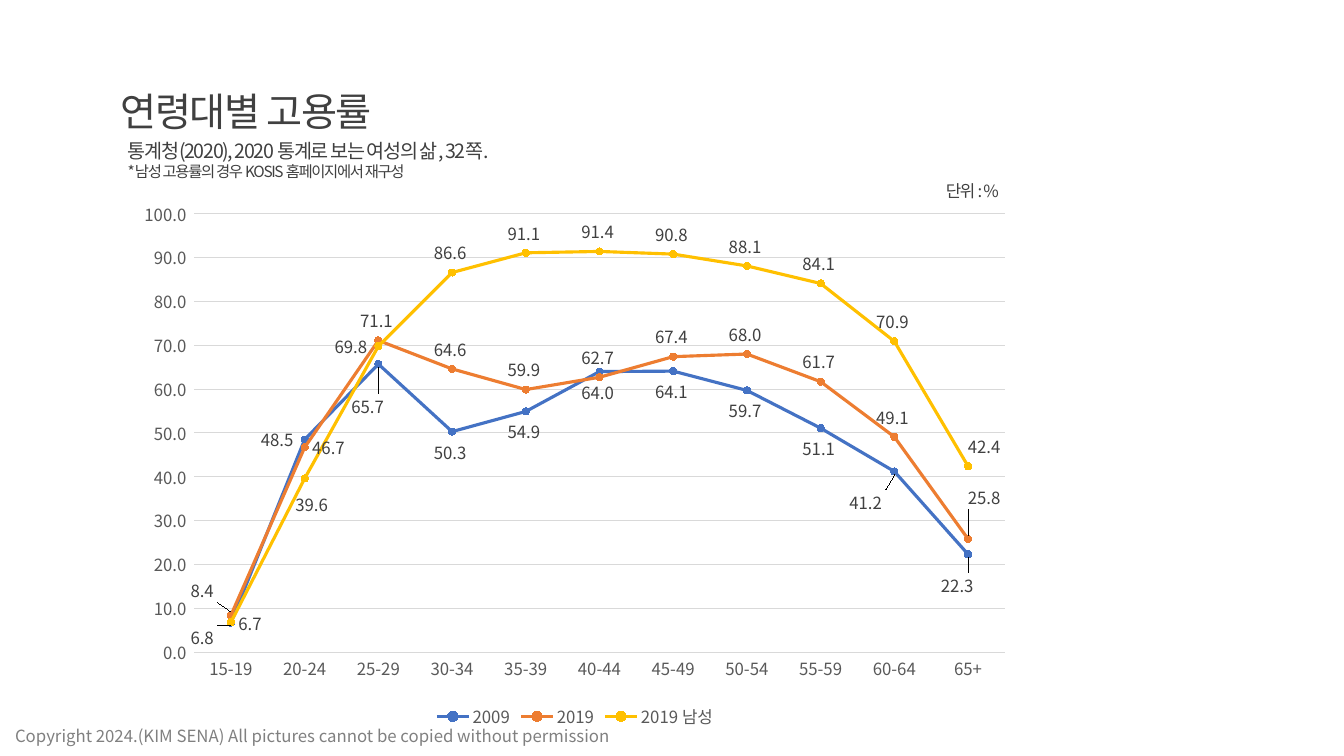
import pptx
import pptx.chart.data
import pptx.dml.color
import pptx.enum.chart
import pptx.enum.shapes
import pptx.enum.text
import pptx.oxml
import pptx.oxml.ns
import pptx.util

Cm, Pt = pptx.util.Cm, pptx.util.Pt
RGB = pptx.dml.color.RGBColor
POS = pptx.enum.chart.XL_LABEL_POSITION
ALIGN = pptx.enum.text.PP_ALIGN

FONT = "Noto Sans CJK KR"
DARK = RGB(0x40, 0x40, 0x40)
TEXT = RGB(0x59, 0x59, 0x59)
GRAY = RGB(0x80, 0x80, 0x80)
GRID = RGB(0xD9, 0xD9, 0xD9)
WHITE = RGB(0xFF, 0xFF, 0xFF)
BLUE = RGB(0x44, 0x72, 0xC4)
ORANGE = RGB(0xED, 0x7D, 0x31)
GOLD = RGB(0xFF, 0xC0, 0x00)

FORMAT = "0.0_);[Red]\\(0.0\\)"
AGES = [f"{age}-{age + 4}" for age in range(15, 65, 5)] + ["65+"]

# Name, colour, label side, values, and labels moved: point -> side, dx, dy
SERIES = [
    ("2009", BLUE, POS.BELOW,
     (6.7, 48.5, 65.7, 50.3, 54.9, 64.0, 64.1, 59.7, 51.1, 41.2, 22.3),
     {0: (POS.RIGHT, 0, 0), 1: (POS.LEFT, 0, 0), 2: (POS.BELOW, -0.01, 0.04),
      9: (POS.BELOW, -0.03, 0.02), 10: (POS.BELOW, -0.01, 0.02)}),
    ("2019", ORANGE, POS.ABOVE,
     (8.4, 46.7, 71.1, 64.6, 59.9, 62.7, 67.4, 68.0, 61.7, 49.1, 25.8),
     {0: (POS.ABOVE, -0.03, -0.01), 1: (POS.RIGHT, 0, 0),
      10: (POS.ABOVE, 0.02, -0.04)}),
    ("2019 남성", GOLD, POS.ABOVE,
     (6.8, 39.6, 69.8, 86.6, 91.1, 91.4, 90.8, 88.1, 84.1, 70.9, 42.4),
     {0: (POS.BELOW, -0.03, -0.01), 1: (POS.BELOW, 0.01, 0.01),
      2: (POS.LEFT, 0, 0), 10: (POS.ABOVE, 0.02, 0)}),
]


def style(font, size, color):
    font.name, font.size = FONT, Pt(size)
    font.color.rgb = color


def write(shape, lines, color, space=0, wrap=False, align=ALIGN.LEFT):
    """Fill a shape with (text, size) lines."""
    frame = shape.text_frame
    frame.text = "\n".join(text for text, size in lines)
    frame.word_wrap = wrap
    frame.vertical_anchor = pptx.enum.text.MSO_ANCHOR.TOP
    frame.auto_size = pptx.enum.text.MSO_AUTO_SIZE.SHAPE_TO_FIT_TEXT
    for para, (text, size) in zip(frame.paragraphs, lines):
        para.alignment = align
        for run in para.runs:
            style(run.font, size, color)
            props = run._r.get_or_add_rPr()
            props.set("spc", str(space))
            face = pptx.oxml.parse_xml(
                f'<a:ea {pptx.oxml.ns.nsdecls("a")} typeface="{FONT}"/>')
            props.find(pptx.oxml.ns.qn("a:latin")).addnext(face)


def add_text(slide, box, lines, color, **look):
    shape = slide.shapes.add_textbox(*map(Cm, box))
    write(shape, lines, color, **look)
    return shape


def add_unit(slide, box, text):
    shape = slide.shapes.add_shape(
        pptx.enum.shapes.MSO_SHAPE.RECTANGLE, *map(Cm, box))
    shape.shadow.inherit = False
    shape.fill.solid()
    shape.fill.fore_color.rgb = WHITE
    shape.line.fill.background()
    write(shape, [(text, 12)], DARK, space=-100, align=ALIGN.CENTER)


def layout(inner="", **parts):
    """Manual chart layout in fractions of the chart."""
    tags = "".join(f'<c:{key} val="{val}"/>' for key, val in parts.items())
    return pptx.oxml.parse_xml(
        f'<c:layout {pptx.oxml.ns.nsdecls("c")}><c:manualLayout>'
        f'{inner}{tags}</c:manualLayout></c:layout>')


def set_labels(series, side, moved):
    labels = series.data_labels
    labels.show_value, labels.position = True, side
    labels.number_format = FORMAT
    labels.number_format_is_linked = False
    style(labels.font, 12, DARK)
    for index, (place, dx, dy) in moved.items():
        label = series.points[index].data_label
        style(label.font, 12, DARK)
        label.position = place
        if dx or dy:
            mark = series._element.xpath(
                f"c:dLbls/c:dLbl/c:idx[@val='{index}']")[0]
            mark.addnext(layout(x=dx, y=dy))


def set_axes(chart):
    ages, rates = chart.category_axis, chart.value_axis
    for axis in (ages, rates):
        style(axis.tick_labels.font, 12, TEXT)
        axis.major_tick_mark = pptx.enum.chart.XL_TICK_MARK.NONE
        axis.minor_tick_mark = pptx.enum.chart.XL_TICK_MARK.NONE
    rates.minimum_scale, rates.maximum_scale, rates.major_unit = 0, 100, 10
    rates.tick_labels.number_format = "#,##0.0_);[Red]\\(#,##0.0\\)"
    rates.tick_labels.number_format_is_linked = False
    rates.format.line.fill.background()
    for line in (ages.format.line, rates.major_gridlines.format.line):
        line.color.rgb, line.width = GRID, Pt(0.75)


def add_chart(slide, box):
    data = pptx.chart.data.CategoryChartData(number_format=FORMAT)
    data.categories = AGES
    for name, color, side, rates, moved in SERIES:
        data.add_series(name, rates)
    chart = slide.shapes.add_chart(
        pptx.enum.chart.XL_CHART_TYPE.LINE_MARKERS, *map(Cm, box), data).chart
    style(chart.font, 10, RGB(0, 0, 0))
    chart.has_title = False
    chart.plots[0].vary_by_categories = False
    set_axes(chart)

    # Legend
    chart.has_legend = True
    chart.legend.position = pptx.enum.chart.XL_LEGEND_POSITION.BOTTOM
    chart.legend.include_in_layout = False
    style(chart.legend.font, 12, TEXT)

    # Plot area
    area = chart._chartSpace.xpath("c:chart/c:plotArea")[0]
    for old in area.xpath("c:layout"):
        area.remove(old)
    area.insert(0, layout('<c:layoutTarget val="inner"/>'
                          '<c:xMode val="edge"/><c:yMode val="edge"/>',
                          x=0.075, y=0.043, w=0.905, h=0.808))

    # Lines, markers and labels
    for series, (name, color, side, rates, moved) in zip(
            chart.plots[0].series, SERIES):
        series.smooth = False
        series.format.line.color.rgb = color
        series.format.line.width = Pt(2.25)
        series.marker.style = pptx.enum.chart.XL_MARKER_STYLE.CIRCLE
        series.marker.size = 5
        series.marker.format.fill.solid()
        series.marker.format.fill.fore_color.rgb = color
        series.marker.format.line.color.rgb = color
        set_labels(series, side, moved)


def main():
    deck = pptx.Presentation()
    deck.slide_width, deck.slide_height = Cm(33.87), Cm(19.05)
    slide = deck.slides.add_slide(deck.slide_layouts[6])

    # Footer
    add_text(slide, (0.13, 18.16, 15.62, 0.76),
             [("Copyright 2024.(KIM SENA) All pictures cannot be copied "
               "without permission", 12)], GRAY, wrap=True)

    # Title
    title = add_text(slide, (2.79, 2.21, 7.57, 1.45),
                     [("연령대별 고용률", 28)], DARK, space=-100)
    title.text_frame.paragraphs[0].line_spacing = 0.9

    # Chart
    add_chart(slide, (3.2, 4.8, 22.58, 13.67))

    # Source and unit
    add_text(slide, (2.97, 3.38, 10.36, 1.32),
             [("통계청(2020), 2020 통계로 보는 여성의 삶, 32쪽.", 14),
              ("*남성 고용률의 경우 KOSIS 홈페이지에서 재구성", 11)],
             DARK, space=-100)
    add_unit(slide, (23.44, 4.42, 2.13, 0.76), "단위 : %")

    deck.save("out.pptx")


if __name__ == "__main__":
    main()
